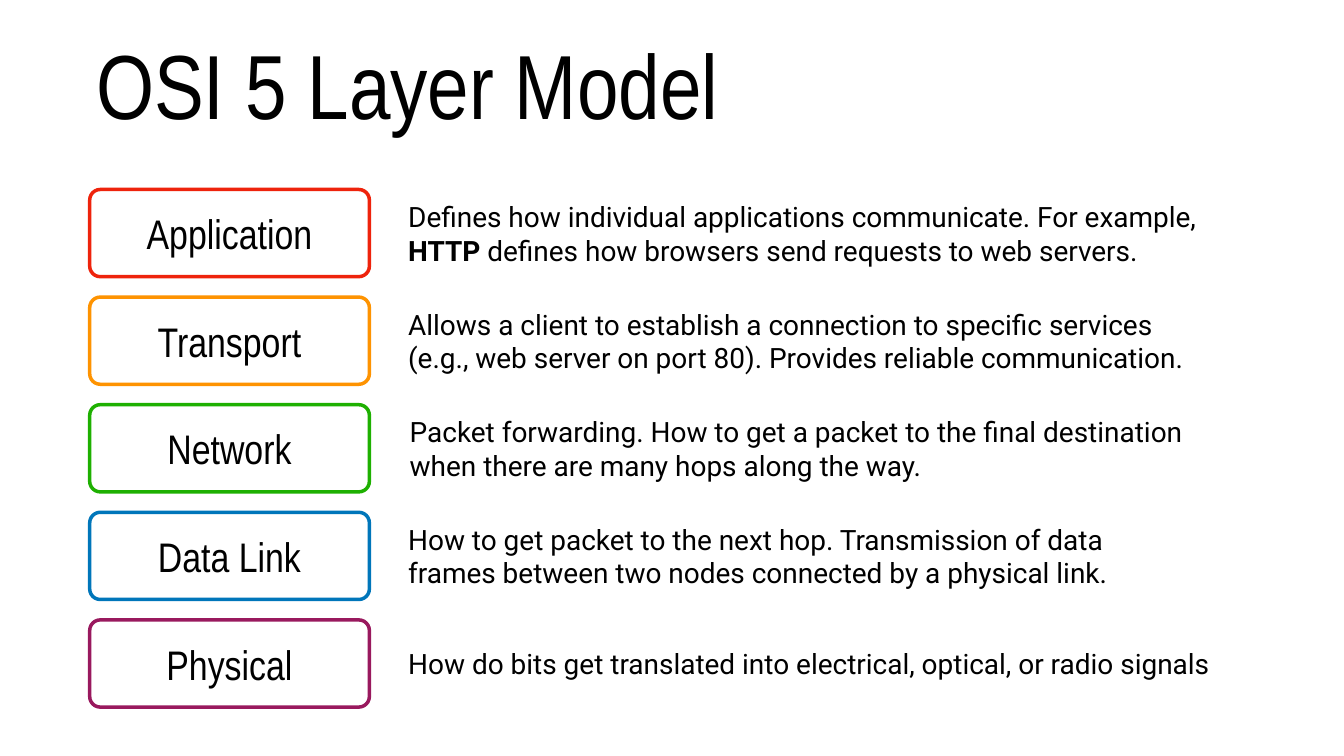
"""Build the OSI 5 Layer Model slide."""
from pptx import Presentation
from pptx.dml.color import RGBColor
from pptx.enum.shapes import MSO_SHAPE
from pptx.enum.text import MSO_ANCHOR, MSO_AUTO_SIZE, PP_ALIGN
from pptx.util import Inches, Pt

COLORS = {
    "text": "000000", "background": "FFFFFF", "Application": "EE230C",
    "Transport": "FE9301", "Network": "1EB001", "Data Link": "0076BA",
    "Physical": "99195E",
}
HEADING_FONT, BODY_FONT = "Arial Narrow", "Roboto"
TITLE = "OSI 5 Layer Model"
BOLD_WORD = "HTTP "

# Layer name, description left, width and height, then lines of runs
LAYERS = [
    ("Application", 8.04, 16.91, 1.43, [
        ["Defines how individual applications communicate. For example, ",
         BOLD_WORD, "defines how browsers send requests to web servers."]]),
    ("Transport", 8.04, 16.47, 1.43, [
        ["Allows a client to establish a connection to specific services"],
        ["(e.g., web server on port 80). Provides reliable communication."]]),
    ("Network", 8.07, 15.79, 1.43, [
        ["Packet forwarding. How to get a packet to the final destination"],
        ["when there are many hops along the way."]]),
    ("Data Link", 8.04, 15.63, 1.43, [
        ["How to get packet to the next hop. Transmission of data frames "
         "between two nodes connected by a physical link."]]),
    ("Physical", 8.04, 16.32, 0.76, [
        ["How do bits get translated into electrical, optical, or radio signals"]]),
]
LAYER_LEFT, LAYER_TOP, LAYER_WIDTH, LAYER_HEIGHT = 1.78, 3.76, 5.55, 1.73
LAYER_PITCH = 2.135


def rgb(name):
    return RGBColor.from_string(COLORS[name])


def set_frame(frame, inset):
    frame.word_wrap = True
    frame.vertical_anchor = MSO_ANCHOR.MIDDLE
    frame.margin_left = frame.margin_right = Inches(inset)
    frame.margin_top = frame.margin_bottom = Inches(inset)


def add_run(paragraph, text, font_name, size, bold=False):
    run = paragraph.add_run()
    run.text = text
    run.font.name = font_name
    run.font.size = Pt(size)
    run.font.bold = bold
    run.font.color.rgb = rgb("text")


def add_title(slide):
    title = slide.shapes.title
    title.left, title.top = Inches(1.85), Inches(0.39)
    title.width, title.height = Inches(22.97), Inches(2.5)
    set_frame(title.text_frame, 0.06)
    title.text_frame.auto_size = MSO_AUTO_SIZE.NONE
    heading = title.text_frame.paragraphs[0]
    heading.alignment = PP_ALIGN.LEFT
    add_run(heading, TITLE, HEADING_FONT, 130)


def add_layer(slide, name, top):
    layer = slide.shapes.add_shape(
        MSO_SHAPE.ROUNDED_RECTANGLE, Inches(LAYER_LEFT), Inches(top),
        Inches(LAYER_WIDTH), Inches(LAYER_HEIGHT))
    layer.adjustments[0] = 0.121
    layer.shadow.inherit = False
    layer.fill.background()
    layer.line.color.rgb = rgb(name)
    layer.line.width = Pt(5)
    set_frame(layer.text_frame, 0)
    label = layer.text_frame.paragraphs[0]
    label.alignment = PP_ALIGN.CENTER
    add_run(label, name, HEADING_FONT, 59)


def add_description(slide, left, middle, width, height, lines):
    description = slide.shapes.add_textbox(
        Inches(left), Inches(middle - height / 2), Inches(width), Inches(height))
    set_frame(description.text_frame, 0.06)
    description.text_frame.auto_size = MSO_AUTO_SIZE.SHAPE_TO_FIT_TEXT
    paragraph = description.text_frame.paragraphs[0]
    for index, line in enumerate(lines):
        if index:
            paragraph.add_line_break()
        for text in line:
            add_run(paragraph, text, BODY_FONT, 40, text == BOLD_WORD)


def main():
    deck = Presentation()
    deck.slide_width, deck.slide_height = Inches(26.67), Inches(15)
    slide = deck.slides.add_slide(deck.slide_layouts[5])
    slide.background.fill.solid()
    slide.background.fill.fore_color.rgb = rgb("background")
    add_title(slide)
    for row, (name, left, width, height, lines) in enumerate(LAYERS):
        top = LAYER_TOP + row * LAYER_PITCH
        add_layer(slide, name, top)
        add_description(slide, left, top + LAYER_HEIGHT / 2, width, height, lines)
    deck.save("out.pptx")


if __name__ == "__main__":
    main()
